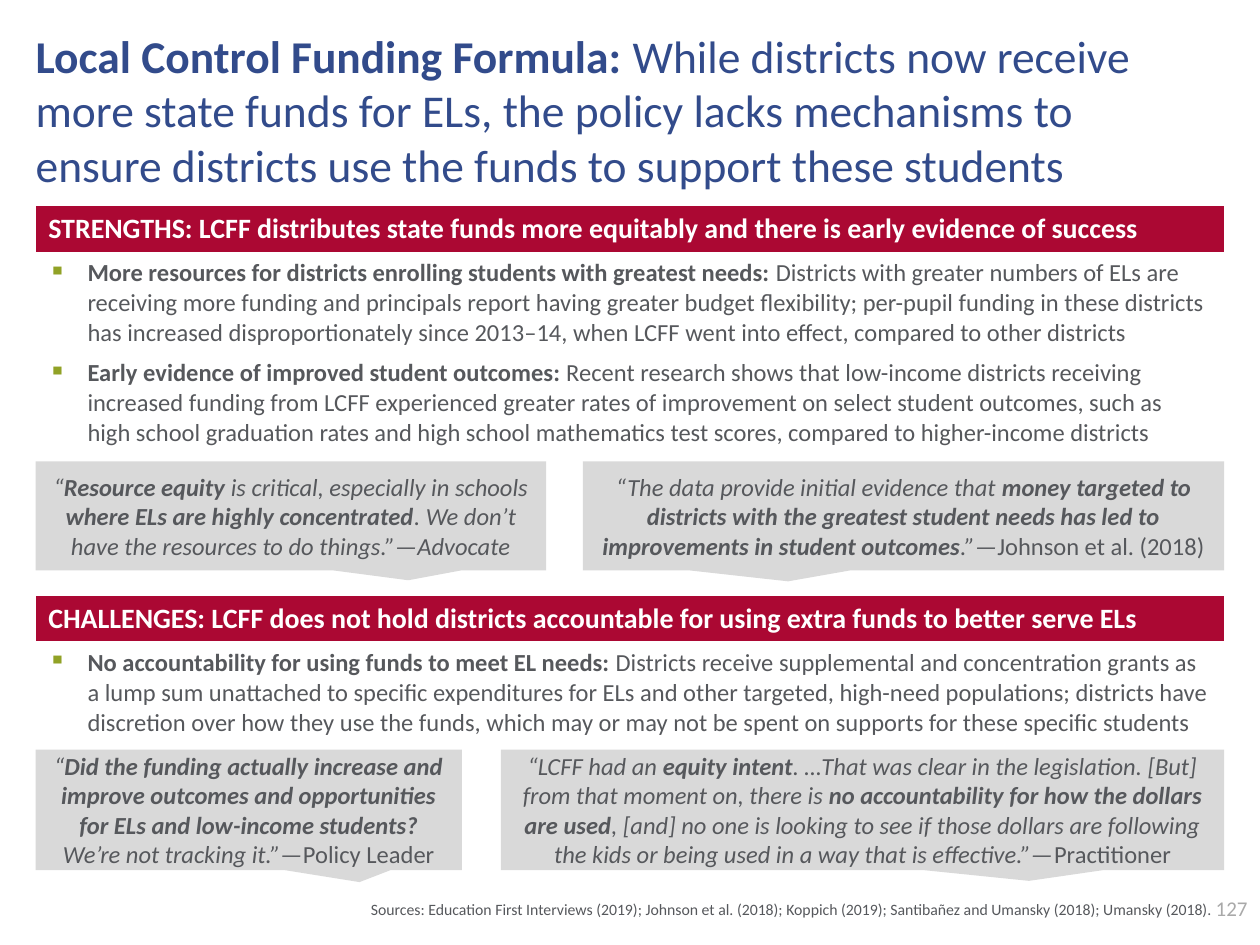
from lxml import etree
from pptx import Presentation
from pptx.dml.color import RGBColor
from pptx.enum.shapes import MSO_SHAPE
from pptx.enum.text import MSO_ANCHOR, PP_ALIGN
from pptx.oxml.ns import qn
from pptx.util import Cm, Pt

CALLOUT = MSO_SHAPE.RECTANGULAR_CALLOUT
TOP, MIDDLE = MSO_ANCHOR.TOP, MSO_ANCHOR.MIDDLE
LEFT, CENTER, RIGHT = PP_ALIGN.LEFT, PP_ALIGN.CENTER, PP_ALIGN.RIGHT

FONT = "Calibri"
NAVY, RED, GREEN = "324B8B", "AB0833", "91A226"
TEXT, LIGHT, PALE, WHITE = "56585C", "A9A9A9", "D9D9D9", "FFFFFF"

MARGIN, RIGHT_EDGE, TABLE_TOP = 0.72, 24.68, 4.14
INDENT = 0.79

# A run is (text, style); style holds b for bold and i for italic.
TITLE = [
    ("Local Control Funding Formula:", "b"),
    (" While districts now receive more state funds for ELs, the policy lacks mechanisms "
     "to ensure districts use the funds to support these students", ""),
]
# (row height, is header, paragraphs)
ROWS = [
    (0.84, True, [
        [("STRENGTHS: LCFF distributes state funds more equitably and there is early "
          "evidence of success", "b")]]),
    (6.91, False, [
        [("More resources for districts enrolling students with greatest needs: ", "b"),
         ("Districts with greater numbers of ELs are receiving more funding and principals "
          "report having greater budget flexibility; per-pupil funding in these districts has "
          "increased disproportionately since 2013–14, when LCFF went into effect, compared "
          "to other districts", "")],
        [("Early evidence of improved student outcomes: ", "b"),
         ("Recent research shows that low-income districts receiving increased funding from "
          "LCFF experienced greater rates of improvement on select student outcomes, such as "
          "high school graduation rates and high school mathematics test scores, compared to "
          "higher-income districts", "")]]),
    (0.84, True, [
        [("CHALLENGES: LCFF does not hold districts accountable for using extra funds to "
          "better serve ELs", "b")]]),
    (3.58, False, [
        [("No accountability for using funds to meet EL needs: ", "b"),
         ("Districts receive supplemental and concentration grants as a lump sum unattached "
          "to specific expenditures for ELs and other targeted, high-need populations; "
          "districts have discretion over how they use the funds, which may or may not be "
          "spent on supports for these specific students", "")]]),
]
# (top, height, [(width, pointer tip, runs) for the left and the right quote])
QUOTE_ROWS = [
    (9.3, 2.2, [
        (10.29, (0.23, 0.59), [
            ("“", "i"), ("Resource equity ", "bi"),
            ("is critical, especially in schools ", "i"),
            ("where ELs are highly concentrated", "bi"),
            (". We don’t have the resources to do things.”—Advocate", "i")]),
        (12.93, (-0.18, 0.6), [
            ("“The data provide initial evidence that ", "i"),
            ("money targeted to districts with the greatest student needs has led to "
             "improvements in student outcomes", "bi"),
            (".”—", "i"), ("Johnson et al. (2018)", "")])]),
    (15.11, 2.43, [
        (8.59, (0.26, 0.6), [
            ("“", "i"),
            ("Did the funding actually increase and improve outcomes and opportunities for "
             "ELs and low-income students? ", "bi"),
            ("We’re not tracking it.”—", "i"), ("Policy Leader", "")]),
        (14.58, (0.23, 0.59), [
            ("“LCFF had an ", "i"), ("equity intent", "bi"),
            (". …That was clear in the legislation. [But] from that moment on, there is ", "i"),
            ("no accountability for how the dollars are used", "bi"),
            (", [and] no one is looking to see if those dollars are following the kids or "
             "being used in a way that is effective.”—", "i"),
            ("Practitioner", "")])]),
]
SOURCES = [("Sources: Education First Interviews (2019); Johnson et al. (2018); Koppich (2019); "
            "Santibañez and Umansky (2018); Umansky (2018).", "")]
PAGE_NUMBER = [("127", "")]


def rgb(color):
    return RGBColor.from_string(color)


def write_runs(paragraph, runs, size, color, align=LEFT):
    paragraph.alignment = align
    for text, style in runs:
        run = paragraph.add_run()
        run.text = text
        font = run.font
        font.name, font.size = FONT, Pt(size)
        font.bold, font.italic = "b" in style, "i" in style
        font.color.rgb = rgb(color)


def add_bullet(paragraph):
    properties = paragraph._p.get_or_add_pPr()
    properties.set("marL", str(Cm(INDENT)))
    properties.set("indent", str(-Cm(INDENT)))
    bullet_color = etree.SubElement(properties, qn("a:buClr"))
    etree.SubElement(bullet_color, qn("a:srgbClr")).set("val", GREEN)
    etree.SubElement(properties, qn("a:buChar")).set("char", "▪")


def add_borders(cell):
    """Draw a thin white line on each side; call before setting the fill."""
    properties = cell._tc.get_or_add_tcPr()
    for side in ("lnL", "lnR", "lnT", "lnB"):
        line = etree.SubElement(properties, qn(f"a:{side}"), w=str(Pt(1)))
        fill = etree.SubElement(line, qn("a:solidFill"))
        etree.SubElement(fill, qn("a:srgbClr")).set("val", WHITE)


def add_text(slide, box, runs, size, color, align, anchor, inset=True):
    frame = slide.shapes.add_textbox(*map(Cm, box)).text_frame
    frame.word_wrap = True
    frame.vertical_anchor = anchor
    if not inset:
        frame.margin_left = frame.margin_right = frame.margin_top = frame.margin_bottom = 0
    write_runs(frame.paragraphs[0], runs, size, color, align)


def add_findings_table(slide):
    width, height = RIGHT_EDGE - MARGIN, sum(row[0] for row in ROWS)
    table = slide.shapes.add_table(
        len(ROWS), 1, Cm(MARGIN), Cm(TABLE_TOP), Cm(width), Cm(height)).table
    table.first_row = table.horz_banding = False
    for index, (row_height, is_header, paragraphs) in enumerate(ROWS):
        table.rows[index].height = Cm(row_height)
        cell = table.cell(index, 0)
        add_borders(cell)
        if is_header:
            cell.fill.solid()
            cell.fill.fore_color.rgb = rgb(RED)
        else:
            cell.fill.background()
        frame = cell.text_frame
        for number, runs in enumerate(paragraphs):
            paragraph = frame.add_paragraph() if number else frame.paragraphs[0]
            if not is_header:
                add_bullet(paragraph)
            paragraph.space_after = Pt(6)
            write_runs(paragraph, runs, *((16, WHITE) if is_header else (14, TEXT)))


def add_quote(slide, box, tip, runs):
    shape = slide.shapes.add_shape(CALLOUT, *map(Cm, box))
    shape.adjustments[0], shape.adjustments[1] = tip
    shape.shadow.inherit = False
    shape.fill.solid()
    shape.fill.fore_color.rgb = rgb(PALE)
    shape.line.fill.background()
    frame = shape.text_frame
    frame.word_wrap = True
    frame.vertical_anchor = MIDDLE
    write_runs(frame.paragraphs[0], runs, 14, TEXT, CENTER)


def main():
    presentation = Presentation()
    presentation.slide_width, presentation.slide_height = Cm(25.4), Cm(19.05)
    slide = presentation.slides.add_slide(presentation.slide_layouts[6])

    add_findings_table(slide)
    add_text(slide, (MARGIN, 0.56, 22.73, 1.47), TITLE, 26, NAVY, LEFT, TOP, inset=False)
    for top, height, (left_quote, right_quote) in QUOTE_ROWS:
        for quote, left in ((left_quote, MARGIN), (right_quote, RIGHT_EDGE - right_quote[0])):
            width, tip, runs = quote
            add_quote(slide, (left, top, width, height), tip, runs)
    add_text(slide, (5.97, 18.08, 18.44, 0.51), SOURCES, 9, TEXT, RIGHT, MIDDLE, inset=False)
    add_text(slide, (23.7, 17.93, 1.7, 0.76), PAGE_NUMBER, 12, LIGHT, RIGHT, MIDDLE)

    presentation.save("out.pptx")


if __name__ == "__main__":
    main()
